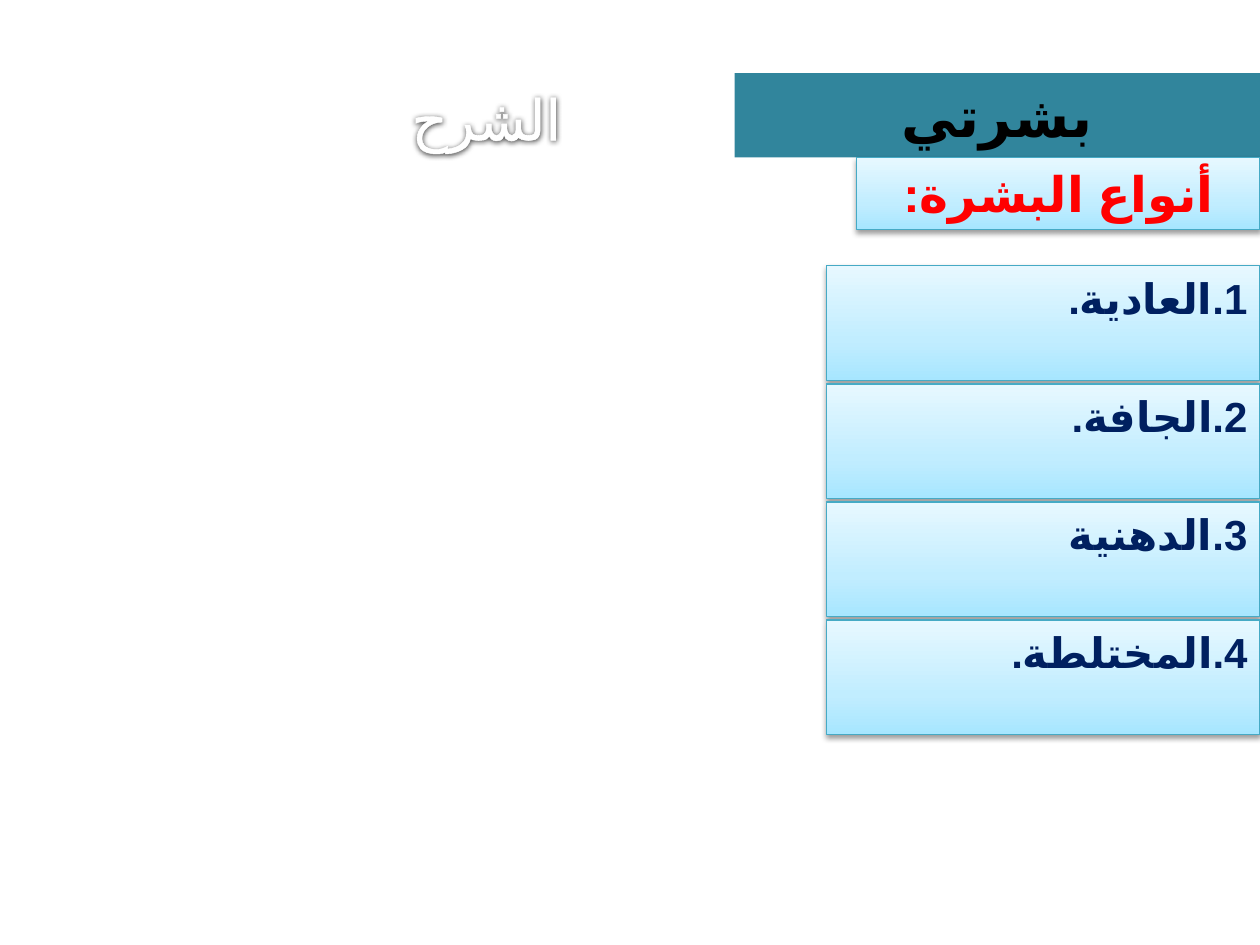
"""Build the slide about skin types with its banner, heading and list of cards."""
from pptx import Presentation
from pptx.dml.color import RGBColor
from pptx.enum.shapes import MSO_SHAPE
from pptx.enum.text import MSO_ANCHOR, PP_ALIGN
from pptx.oxml import parse_xml
from pptx.util import Inches, Pt

RECTANGLE = MSO_SHAPE.RECTANGLE
TOP, MIDDLE = MSO_ANCHOR.TOP, MSO_ANCHOR.MIDDLE
CENTER, RIGHT = PP_ALIGN.CENTER, PP_ALIGN.RIGHT
NAMESPACE = 'xmlns:a="http://schemas.openxmlformats.org/drawingml/2006/main"'

TITLE = "بشرتي"
EXPLANATION = "الشرح"
HEADING = "أنواع البشرة:"
SKIN_TYPES = ["1.العادية.", "2.الجافة.", "3.الدهنية", "4.المختلطة."]

THEME = {
    "banner": "31859C", "title": "000000", "heading": "FF0000",
    "card": "002060", "explanation": "FFFFFF", "border": "46AAC5",
    "gradient": [(0, "A7E6FF"), (35, "C1EDFF"), (100, "E7F8FF")],
    "font": "Calibri", "explanation_font": "Roboto", "arabic_font": "Arial",
    "title_size": 32, "heading_size": 28, "card_size": 24,
}

TITLE_AREA = (5.83, 0.58, 4.17, 0.67)
EXPLANATION_AREA = (1.89, 0.62, 3.94, 0.64)
HEADING_AREA = (6.8, 1.25, 3.2, 0.57)
CARD_LEFT, CARD_WIDTH, CARD_HEIGHT = 6.56, 3.44, 0.91
FIRST_CARD_TOP, LAST_CARD_TOP = 2.11, 4.92
CARD_PITCH = (LAST_CARD_TOP - FIRST_CARD_TOP) / (len(SKIN_TYPES) - 1)


def rgb(name):
    return RGBColor.from_string(THEME[name])


def shadow_xml(blur, distance, opacity):
    return parse_xml(
        f'<a:effectLst {NAMESPACE}><a:outerShdw blurRad="{Pt(blur)}" '
        f'dist="{Pt(distance)}" dir="5400000" rotWithShape="0">'
        f'<a:srgbClr val="000000"><a:alpha val="{opacity * 1000}"/></a:srgbClr>'
        '</a:outerShdw></a:effectLst>')


def gradient_xml():
    stops = "".join(
        f'<a:gs pos="{position * 1000}"><a:srgbClr val="{color}"/></a:gs>'
        for position, color in THEME["gradient"])
    return parse_xml(
        f'<a:gradFill {NAMESPACE} rotWithShape="1"><a:gsLst>{stops}</a:gsLst>'
        '<a:lin ang="16200000" scaled="0"/></a:gradFill>')


def write(shape, text, role, size, align=CENTER, anchor=MIDDLE, font="font", bold=True):
    frame = shape.text_frame
    frame.text = text
    frame.word_wrap = True
    frame.vertical_anchor = anchor
    para = frame.paragraphs[0]
    para.alignment = align
    para._p.get_or_add_pPr().set("rtl", "1")
    span = para.runs[0]
    span.font.size = Pt(THEME[size])
    span.font.bold = bold
    span.font.color.rgb = rgb(role)
    span.font.name = THEME[font]
    properties = span.font._element
    properties.set("lang", "ar-SA")
    properties.append(parse_xml(f'<a:cs {NAMESPACE} typeface="{THEME["arabic_font"]}"/>'))
    return span


def add_panel(page, area):
    panel = page.shapes.add_shape(RECTANGLE, *map(Inches, area))
    properties = panel._element.spPr
    properties.append(gradient_xml())
    panel.line.color.rgb = rgb("border")
    panel.line.width = Pt(0.75)
    properties.append(shadow_xml(3.1, 1.6, 38))
    return panel


def add_title(page):
    title = page.shapes.title
    title.left, title.top, title.width, title.height = map(Inches, TITLE_AREA)
    title.fill.solid()
    title.fill.fore_color.rgb = rgb("banner")
    write(title, TITLE, "title", "title_size")


def add_explanation(page):
    box = page.shapes.add_textbox(*map(Inches, EXPLANATION_AREA))
    span = write(box, EXPLANATION, "explanation", "title_size",
                 anchor=TOP, font="explanation_font", bold=False)
    span.font._element.insert(0, parse_xml(
        f'<a:ln {NAMESPACE} w="{Pt(1.45)}"><a:solidFill>'
        f'<a:srgbClr val="{THEME["explanation"]}"/></a:solidFill></a:ln>'))
    box._element.spPr.append(shadow_xml(3, 0.5, 70))


def main():
    deck = Presentation()
    deck.slide_width, deck.slide_height = Inches(10), Inches(7.5)
    page = deck.slides.add_slide(deck.slide_layouts[5])
    add_title(page)
    write(add_panel(page, HEADING_AREA), HEADING, "heading", "heading_size")
    add_explanation(page)
    for index, skin_type in enumerate(SKIN_TYPES):
        area = (CARD_LEFT, FIRST_CARD_TOP + index * CARD_PITCH, CARD_WIDTH, CARD_HEIGHT)
        write(add_panel(page, area), skin_type, "card", "card_size", RIGHT, TOP)
    deck.save("out.pptx")


if __name__ == "__main__":
    main()
